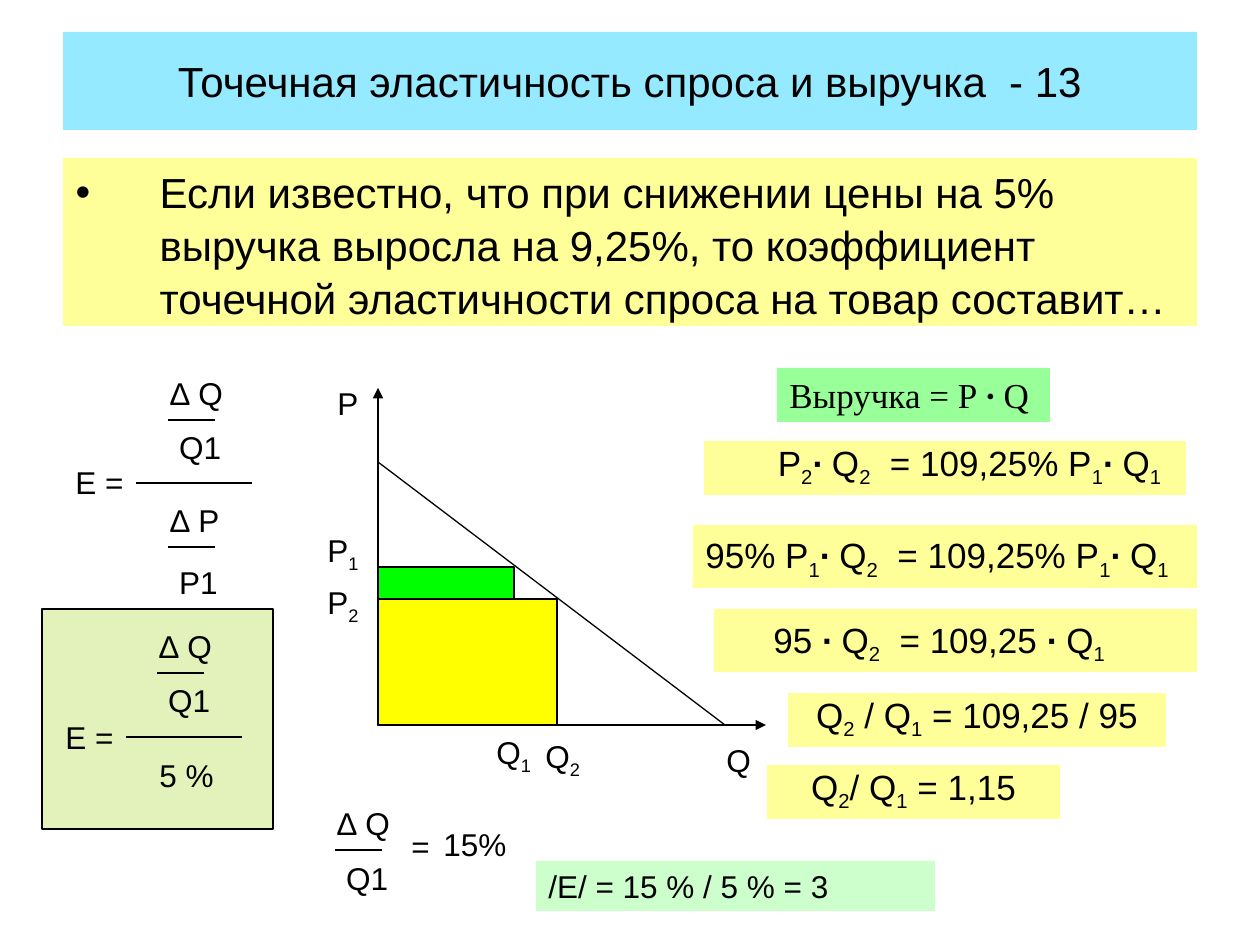
import pptx
import pptx.util
import pptx.dml.color
import pptx.enum.text
import pptx.enum.shapes
import pptx.oxml.ns
import lxml.etree

RGB = pptx.dml.color.RGBColor
BLACK = RGB(0, 0, 0)
CYAN = RGB(0x00, 0xCC, 0xFF)
CREAM = RGB(0xFF, 0xFF, 0x99)
OLIVE = RGB(0x99, 0xCC, 0x00)
GREEN = RGB(0x00, 0xFF, 0x00)
YELLOW = RGB(0xFF, 0xFF, 0x00)
MINT = RGB(0xCC, 0xFF, 0xCC)
ALIGN = pptx.enum.text.PP_ALIGN
ANCHOR = pptx.enum.text.MSO_ANCHOR
KIND = pptx.enum.shapes.MSO_SHAPE
SANS, SERIF = "Arial", "Times New Roman"
PX = 914400 / 126

TITLE = "Точечная эластичность спроса и выручка  - 13"
TASK = ("Если известно, что при снижении цены на 5% выручка выросла на 9,25%, "
        "то коэффициент точечной эластичности спроса на товар составит…")

# "_" lowers the next character
FRACS = [
    (158, 368, "∆ Q", " Q1", 54),
    (158, 495, "∆ Р", " Р1", 62),
    (147, 621, "∆ Q", " Q1", 54),
    (325, 798, "∆ Q", " Q1", 55),
]
LABELS = [
    (63, 457, 84, "Е ="),
    (53, 712, 84, "Е ="),
    (147, 750, 84, "5 %"),
    (325, 378, 53, "Р"),
    (714, 735, 53, "Q"),
    (315, 525, 84, "Р_1"),
    (315, 577, 84, "Р_2"),
    (484, 727, 63, "Q_1"),
    (533, 731, 63, "Q_2"),
    (399, 821, 42, "="),
    (431, 819, 116, "15%"),
]
BANDS = [
    (777, 368, 273, 54, GREEN, 40, "Выручка = Р ∙ Q", SERIF, 20, ALIGN.LEFT, 0),
    (704, 441, 482, 54, CREAM, 100, "Р_2∙ Q_2  = 109,25% Р_1∙ Q_1", SANS, 20, ALIGN.CENTER, 49),
    (693, 525, 504, 63, CREAM, 100, "95% Р_1∙ Q_2  = 109,25% Р_1∙ Q_1", SANS, 20, ALIGN.LEFT, 0),
    (714, 609, 483, 63, CREAM, 100, "95 ∙ Q_2  = 109,25 ∙ Q_1", SANS, 20, ALIGN.LEFT, 47),
    (788, 693, 378, 54, CREAM, 100, "Q_2 / Q_1 = 109,25 / 95", SANS, 20, ALIGN.CENTER, 0),
    (767, 765, 293, 54, CREAM, 100, "Q_2/ Q_1 = 1,15", SANS, 20, ALIGN.CENTER, 0),
    (536, 861, 399, 50, MINT, 100, "/Е/ = 15 % / 5 % = 3", SANS, 18, ALIGN.LEFT, 0),
]
LEFT, BASE = 378, 725
AXES = [(LEFT, BASE, LEFT, 388), (LEFT, BASE, 766, BASE)]
DEMAND = (LEFT, 462, 725, BASE)
SALES = [(514, 567, GREEN), (557, 599, YELLOW)]
BARS = [(136, 483, 252, 483), (126, 737, 242, 737)]


def emu(*nums):
    return [pptx.util.Emu(round(n * PX)) for n in nums]


def tint(shape, color, alpha=100):
    shape.fill.solid()
    shape.fill.fore_color.rgb = color
    if alpha < 100:
        node = shape._element.spPr.find(".//" + pptx.oxml.ns.qn("a:srgbClr"))
        lxml.etree.SubElement(node, pptx.oxml.ns.qn("a:alpha")).set("val", str(alpha * 1000))


def style(run, size, face=SANS):
    run.font.size = pptx.util.Pt(size)
    run.font.name = face
    run.font.color.rgb = BLACK


def pieces(text):
    for num, part in enumerate(text.split("_")):
        if num:
            yield part[0], "sub"
            part = part[1:]
        for pos, plain in enumerate(part.split("∙")):
            if pos:
                yield "∙", "bold"
            if plain:
                yield plain, ""


def write(shape, text, size, face=SANS, align=ALIGN.LEFT, anchor=ANCHOR.TOP):
    frame = shape.text_frame
    frame.word_wrap = True
    frame.vertical_anchor = anchor
    para = frame.paragraphs[0]
    para.alignment = align
    for part, look in pieces(text):
        run = para.add_run()
        run.text = part
        style(run, size, face)
        if look == "bold":
            run.font.bold = True
        if look == "sub":
            run._r.get_or_add_rPr().set("baseline", "-25000")
    return para


def rect(x, y, w, h, color, alpha=100, edge=True):
    shape = slide.shapes.add_shape(KIND.RECTANGLE, *emu(x, y, w, h))
    shape.shadow.inherit = False
    tint(shape, color, alpha)
    if edge:
        shape.line.color.rgb = BLACK
        shape.line.width = pptx.util.Pt(0.75)
    else:
        shape.line.fill.background()
    return shape


def line(ends, arrow=False):
    link = slide.shapes.add_connector(pptx.enum.shapes.MSO_CONNECTOR.STRAIGHT, *emu(*ends))
    link.line.color.rgb = BLACK
    link.line.width = pptx.util.Pt(0.75)
    if arrow:
        tail = lxml.etree.SubElement(link.line._get_or_add_ln(), pptx.oxml.ns.qn("a:tailEnd"))
        tail.set("type", "triangle")
    lxml.etree.SubElement(link._element.spPr, pptx.oxml.ns.qn("a:effectLst"))


def label(x, y, w, text):
    write(slide.shapes.add_textbox(*emu(x, y, w, 50)), text, 18)


def place(shape, text, box, color, alpha, align, anchor):
    shape.left, shape.top, shape.width, shape.height = emu(*box)
    tint(shape, color, alpha)
    para = write(shape, text, 24, SANS, align, anchor)
    shape.text_frame.auto_size = pptx.enum.text.MSO_AUTO_SIZE.NONE
    return para


deck = pptx.Presentation()
deck.slide_width, deck.slide_height = emu(1260, 945)
slide = deck.slides.add_slide(deck.slide_layouts[1])

place(slide.shapes.title, TITLE, (63, 32, 1134, 98), CYAN, 41, ALIGN.CENTER, ANCHOR.MIDDLE)
task = place(slide.placeholders[1], TASK, (63, 158, 1134, 168), CREAM, 100, ALIGN.LEFT, ANCHOR.TOP)
task.line_spacing = 1.05
indent = emu(84)[0]
task._p.get_or_add_pPr().set("marL", str(indent))
task._p.get_or_add_pPr().set("indent", str(-indent))

rect(42, 609, 231, 220, OLIVE, 27)
for x, y, top, low, drop in FRACS:
    label(x, y, 95, top)
    label(x, y + drop, 95, low)
    line((x + 10, y + 52, x + 57, y + 52))
for item in LABELS:
    label(*item)
for ends in BARS:
    line(ends)

for ends in AXES:
    line(ends, True)
line(DEMAND)
for right, top, color in SALES:
    rect(LEFT, top, right - LEFT, BASE - top, color)

for x, y, w, h, color, alpha, text, face, size, align, inset in BANDS:
    band = rect(x, y, w, h, color, alpha, False)
    para = write(band, text, size, face, align, ANCHOR.BOTTOM)
    para._p.get_or_add_pPr().set("marL", str(emu(inset)[0]))

deck.save("out.pptx")
